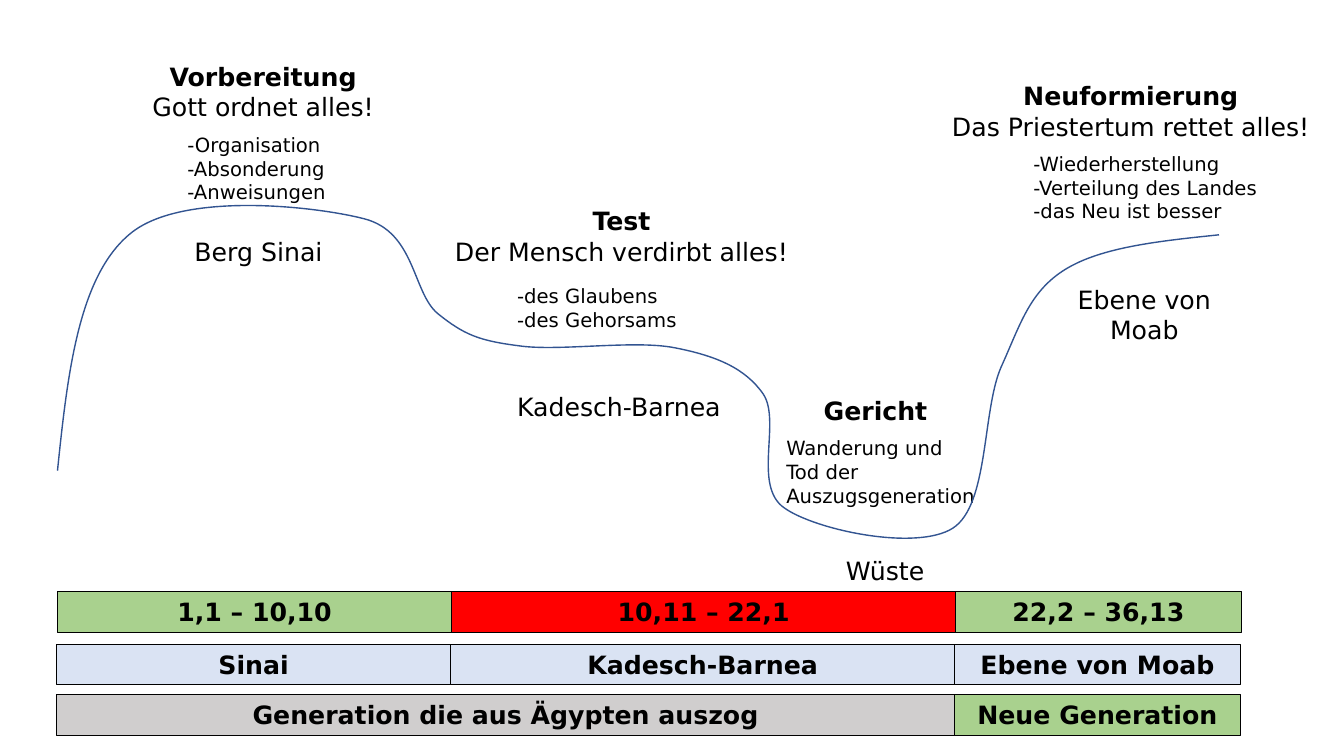
from lxml import etree
from pptx import Presentation
from pptx.dml.color import RGBColor
from pptx.enum.shapes import MSO_SHAPE
from pptx.enum.text import MSO_ANCHOR, MSO_AUTO_SIZE, PP_ALIGN
from pptx.oxml.ns import qn
from pptx.util import Inches, Pt

LEFT, CENTER = PP_ALIGN.LEFT, PP_ALIGN.CENTER
GROW, TOP = MSO_AUTO_SIZE.SHAPE_TO_FIT_TEXT, MSO_ANCHOR.TOP
RECTANGLE = MSO_SHAPE.RECTANGLE

THEME = {
    "font": "DejaVu Sans",
    "large": 18, "small": 14, "line_spacing": 1.22,
    "text": "000000", "curve": "325491", "border": "000000",
    "green": "A9D18E", "red": "FF0000", "blue": "DAE3F3", "grey": "D0CECE",
}

# Stage headings: (left, top, width), bold title, plain subtitle
HEADINGS = [
    ((1.22, 0.56, 2.78), "Vorbereitung", "Gott ordnet alles!"),
    ((4.18, 1.99, 3.97), "Test", "Der Mensch verdirbt alles!"),
    ((9.32, 0.75, 3.79), "Neuformierung", "Das Priestertum rettet alles!"),
]
JUDGEMENT = ((8.07, 3.87, 1.25), "Gericht")

# Details of each stage: (left, top, width), lines, number of lines when wrapped
DETAILS = [
    ((1.76, 1.27, 2.04), ["-Organisation", "-Absonderung", "-Anweisungen"], 3),
    ((5.03, 2.77, 2.04), ["-des Glaubens", "-des Gehorsams"], 2),
    ((7.7, 4.28, 2.09), ["Wanderung und Tod der Auszugsgeneration"], 3),
    ((10.15, 1.46, 2.61),
     ["-Wiederherstellung", "-Verteilung des Landes", "-das Neu ist besser"], 3),
]

# Places below the curve: (left, top, width), name, alignment, wrapped lines
PLACES = [
    ((1.83, 2.29, 1.56), "Berg Sinai", LEFT, 1),
    ((5.03, 3.83, 2.34), "Kadesch-Barnea", LEFT, 1),
    ((8.29, 5.46, 1.08), "Wüste", LEFT, 1),
    ((10.53, 2.77, 1.64), "Ebene von Moab", CENTER, 2),
]

# Journey curve: frame, start, then two control points and an end per segment
CURVE_FRAME = (0.57, 2.04, 11.52, 3.3)
CURVE_START = (0.57, 4.67)
CURVE_SEGMENTS = [
    ((0.67, 3.7), (0.78, 2.74), (1.29, 2.32)),
    ((1.79, 1.9), (3.1, 2.04), (3.61, 2.17)),
    ((4.12, 2.3), (4.09, 2.9), (4.34, 3.11)),
    ((4.6, 3.32), (4.75, 3.38), (5.14, 3.43)),
    ((5.53, 3.49), (6.28, 3.37), (6.69, 3.45)),
    ((7.1, 3.53), (7.39, 3.65), (7.57, 3.91)),
    ((7.75, 4.18), (7.46, 4.82), (7.78, 5.04)),
    ((8.09, 5.26), (9.09, 5.47), (9.45, 5.24)),
    ((9.81, 5.01), (9.74, 4.07), (9.93, 3.64)),
    ((10.12, 3.22), (10.21, 2.89), (10.57, 2.67)),
    ((10.93, 2.45), (11.51, 2.39), (12.09, 2.33)),
]

# Bars: (left, top) of the row, then (text, fill, first column, columns)
COLUMN_WIDTHS = [3.91, 5, 2.83]
BAR_ROWS = [
    ((0.56, 6.39), [("Sinai", "blue", 0, 1), ("Kadesch-Barnea", "blue", 1, 1),
                    ("Ebene von Moab", "blue", 2, 1)]),
    ((0.56, 6.89), [("Generation die aus Ägypten auszog", "grey", 0, 2),
                    ("Neue Generation", "green", 2, 1)]),
    ((0.57, 5.87), [("1,1 – 10,10", "green", 0, 1), ("10,11 – 22,1", "red", 1, 1),
                    ("22,2 – 36,13", "green", 2, 1)]),
]


def color(name):
    return RGBColor.from_string(THEME[name])


def text_height(size, line_count):
    return 0.1 + THEME[size] * THEME["line_spacing"] / 72 * line_count


def write(shape, lines, size, alignment):
    """Fill a shape with (text, bold) lines."""
    frame = shape.text_frame
    frame_format = {"word_wrap": True, "auto_size": GROW, "vertical_anchor": TOP}
    for name, value in frame_format.items():
        setattr(frame, name, value)
    for index, (text, bold) in enumerate(lines):
        paragraph = frame.add_paragraph() if index else frame.paragraphs[0]
        paragraph.alignment = alignment
        run = paragraph.add_run()
        run.text = text
        font_format = {"name": THEME["font"], "size": Pt(THEME[size]), "bold": bold}
        for name, value in font_format.items():
            setattr(run.font, name, value)
        run.font.color.rgb = color("text")


def add_text(slide, place, lines, size, alignment, line_count):
    box = (*place, text_height(size, line_count))
    shape = slide.shapes.add_textbox(*map(Inches, box))
    write(shape, lines, size, alignment)


def set_line(shape, name, width):
    shape.shadow.inherit = False
    shape.line.color.rgb = color(name)
    shape.line.width = Pt(width)


def add_curve(slide):
    builder = slide.shapes.build_freeform(*map(Inches, CURVE_START))
    ends = [tuple(map(Inches, segment[-1])) for segment in CURVE_SEGMENTS]
    builder.add_line_segments(ends, close=False)
    curve = builder.convert_to_shape()
    curve.fill.background()
    set_line(curve, "curve", 1)

    # Turn the straight segments into cubic ones within the curve's frame
    frame = dict(zip(("left", "top", "width", "height"), map(Inches, CURVE_FRAME)))
    for name, value in frame.items():
        setattr(curve, name, value)
    outline = next(curve.element.iter(qn("a:path")))
    outline.set("w", str(frame["width"]))
    outline.set("h", str(frame["height"]))
    for command in list(outline):
        outline.remove(command)
    commands = [("a:moveTo", [CURVE_START])]
    commands += [("a:cubicBezTo", segment) for segment in CURVE_SEGMENTS]
    for tag, points in commands:
        command = etree.SubElement(outline, qn(tag))
        for x, y in points:
            etree.SubElement(command, qn("a:pt"), x=str(Inches(x) - frame["left"]),
                             y=str(Inches(y) - frame["top"]))


def add_bar(slide, row_left, top, text, fill, first, columns):
    left = row_left + sum(COLUMN_WIDTHS[:first])
    width = sum(COLUMN_WIDTHS[first:first + columns])
    box = (left, top, width, text_height("large", 1))
    bar = slide.shapes.add_shape(RECTANGLE, *map(Inches, box))
    bar.fill.solid()
    bar.fill.fore_color.rgb = color(fill)
    set_line(bar, "border", 0.75)
    write(bar, [(text, True)], "large", CENTER)


def main():
    presentation = Presentation()
    presentation.slide_width = Inches(13.33)
    presentation.slide_height = Inches(7.5)
    slide = presentation.slides.add_slide(presentation.slide_layouts[6])

    # Labels around the curve
    for place, title, subtitle in HEADINGS:
        add_text(slide, place, [(title, True), (subtitle, False)], "large", CENTER, 2)
    place, title = JUDGEMENT
    add_text(slide, place, [(title, True)], "large", LEFT, 1)
    for place, lines, line_count in DETAILS:
        add_text(slide, place, [(line, False) for line in lines], "small", LEFT,
                 line_count)
    for place, name, alignment, line_count in PLACES:
        add_text(slide, place, [(name, False)], "large", alignment, line_count)

    add_curve(slide)

    # Bars along the bottom
    for (left, top), bars in BAR_ROWS:
        for bar in bars:
            add_bar(slide, left, top, *bar)

    presentation.save("out.pptx")


if __name__ == "__main__":
    main()
